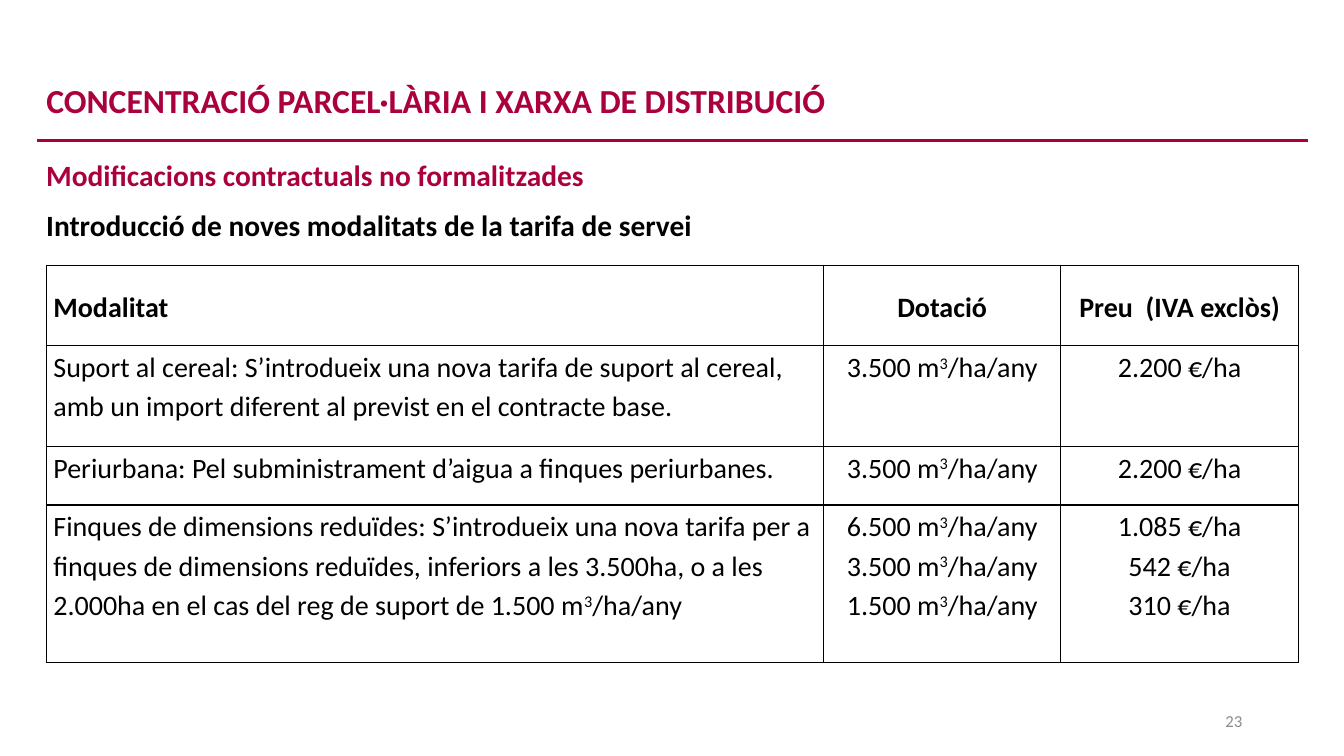
from lxml import etree
from pptx import Presentation
from pptx.dml.color import RGBColor
from pptx.enum import shapes, text
from pptx.oxml import ns
from pptx.util import Inches, Pt

CRIMSON = RGBColor(0xAB, 0x00, 0x3E)
BLACK = RGBColor(0, 0, 0)
GREY = RGBColor(0x8C, 0x8C, 0x8C)
FONT = "Calibri"
LEFT, CENTER, RIGHT, JUSTIFY = (
    text.PP_ALIGN.LEFT, text.PP_ALIGN.CENTER, text.PP_ALIGN.RIGHT, text.PP_ALIGN.JUSTIFY)
TOP, MIDDLE = text.MSO_ANCHOR.TOP, text.MSO_ANCHOR.MIDDLE

COLUMN_WIDTHS = (7.71, 2.35, 2.36)
ROW_HEIGHTS = (0.8, 1, 0.58, 1.56)
TARIFFS = (
    ("Modalitat", "Dotació", "Preu  (IVA exclòs)"),
    ("Suport al cereal: S’introdueix una nova tarifa de suport al cereal, "
     "amb un import diferent al previst en el contracte base.",
     "3.500 m³/ha/any", "2.200 €/ha"),
    ("Periurbana: Pel subministrament d’aigua a finques periurbanes.",
     "3.500 m³/ha/any", "2.200 €/ha"),
    ("Finques de dimensions reduïdes: S’introdueix una nova tarifa per a "
     "finques de dimensions reduïdes, inferiors a les 3.500ha, o a les "
     "2.000ha en el cas del reg de suport de 1.500 m³/ha/any",
     "6.500 m³/ha/any\n3.500 m³/ha/any\n1.500 m³/ha/any",
     "1.085 €/ha\n542 €/ha\n310 €/ha"),
)


def write(frame, words, size, color=BLACK, bold=False, align=LEFT,
          line_spacing=None, before=0, after=0):
    """Fill a frame with one paragraph; newlines are line breaks, ³ is a raised 3."""
    para = frame.paragraphs[0]
    para.alignment = align
    para.line_spacing = line_spacing
    para.space_before, para.space_after = Pt(before), Pt(after)

    def add_span(piece, raised=False):
        span = para.add_run()
        span.text = piece
        font = span.font
        font.name, font.size, font.bold = FONT, Pt(size), bold
        font.color.rgb = color
        if raised:
            font._element.set("baseline", "30000")

    for number, line in enumerate(words.split("\n")):
        if number:
            para.add_line_break()
        for index, piece in enumerate(line.split("³")):
            if index:
                add_span("3", raised=True)
            add_span(piece)


def add_text(page, box, words, size, anchor=TOP, **style):
    label = page.shapes.add_textbox(*map(Inches, box))
    label.text_frame.word_wrap = True
    label.text_frame.vertical_anchor = anchor
    write(label.text_frame, words, size, **style)


def add_heading(page, box, words):
    """Place the title in its box, with the rule just below it."""
    left, top, width, height = box
    title = page.shapes.title
    title.left, title.top, title.width, title.height = map(Inches, box)
    title.text_frame.auto_size = text.MSO_AUTO_SIZE.NONE
    title.text_frame.vertical_anchor = MIDDLE
    write(title.text_frame, words, 24, color=CRIMSON, bold=True, line_spacing=0.9)
    level = Inches(top + height + 0.05)
    rule = page.shapes.add_connector(
        shapes.MSO_CONNECTOR.STRAIGHT, Inches(left + 0.01), level,
        Inches(left + width + 0.01), level)
    rule.line.color.rgb = CRIMSON
    rule.line.width = Pt(2.25)
    etree.SubElement(rule._element.spPr, ns.qn("a:effectLst"))


def add_subheadings(page, box):
    left, top, width, height = box
    lines = (("Modificacions contractuals no formalitzades", CRIMSON),
             ("Introducció de noves modalitats de la tarifa de servei", BLACK))
    for index, (words, color) in enumerate(lines):
        add_text(page, (left, top + index * height / 2, width, 0.48), words, 21,
                 color=color, bold=True, align=JUSTIFY)


def set_borders(cell):
    properties = cell._tc.get_or_add_tcPr()
    for index, side in enumerate(("lnL", "lnR", "lnT", "lnB")):
        line = etree.Element(ns.qn(f"a:{side}"), w=str(Pt(1)))
        fill = etree.SubElement(line, ns.qn("a:solidFill"))
        etree.SubElement(fill, ns.qn("a:srgbClr"), val=str(BLACK))
        properties.insert(index, line)


def add_tariff_table(page, box):
    frame = page.shapes.add_table(len(TARIFFS), len(COLUMN_WIDTHS), *map(Inches, box))
    table = frame.table
    table.first_row = table.horz_banding = False
    for column, width in zip(table.columns, COLUMN_WIDTHS):
        column.width = Inches(width)
    for row_index, (row, height) in enumerate(zip(table.rows, ROW_HEIGHTS)):
        row.height = Inches(height)
        header = row_index == 0
        for column_index, cell in enumerate(row.cells):
            cell.fill.background()
            cell.margin_left = cell.margin_right = Inches(0.07)
            cell.margin_top = cell.margin_bottom = 0
            cell.vertical_anchor = MIDDLE if header else TOP
            set_borders(cell)
            write(cell.text_frame, TARIFFS[row_index][column_index], 20, bold=header,
                  align=CENTER if column_index else LEFT,
                  line_spacing=1.15, before=4.3, after=4)


def build_tariff_slide(deck):
    page = deck.slides.add_slide(deck.slide_layouts.get_by_name("Title Only"))
    add_heading(page, (0.36, 0.7, 12.6, 0.64),
                "CONCENTRACIÓ PARCEL·LÀRIA I XARXA DE DISTRIBUCIÓ")
    add_subheadings(page, (0.36, 1.51, 11.59, 1))
    add_tariff_table(page, (0.46, 2.63, sum(COLUMN_WIDTHS), sum(ROW_HEIGHTS)))
    add_text(page, (9.42, 6.95, 3, 0.4), "23", 12, anchor=MIDDLE,
             color=GREY, align=RIGHT)


def main():
    deck = Presentation()
    deck.slide_width, deck.slide_height = Inches(13.33), Inches(7.5)
    build_tariff_slide(deck)
    deck.save("out.pptx")


if __name__ == "__main__":
    main()
